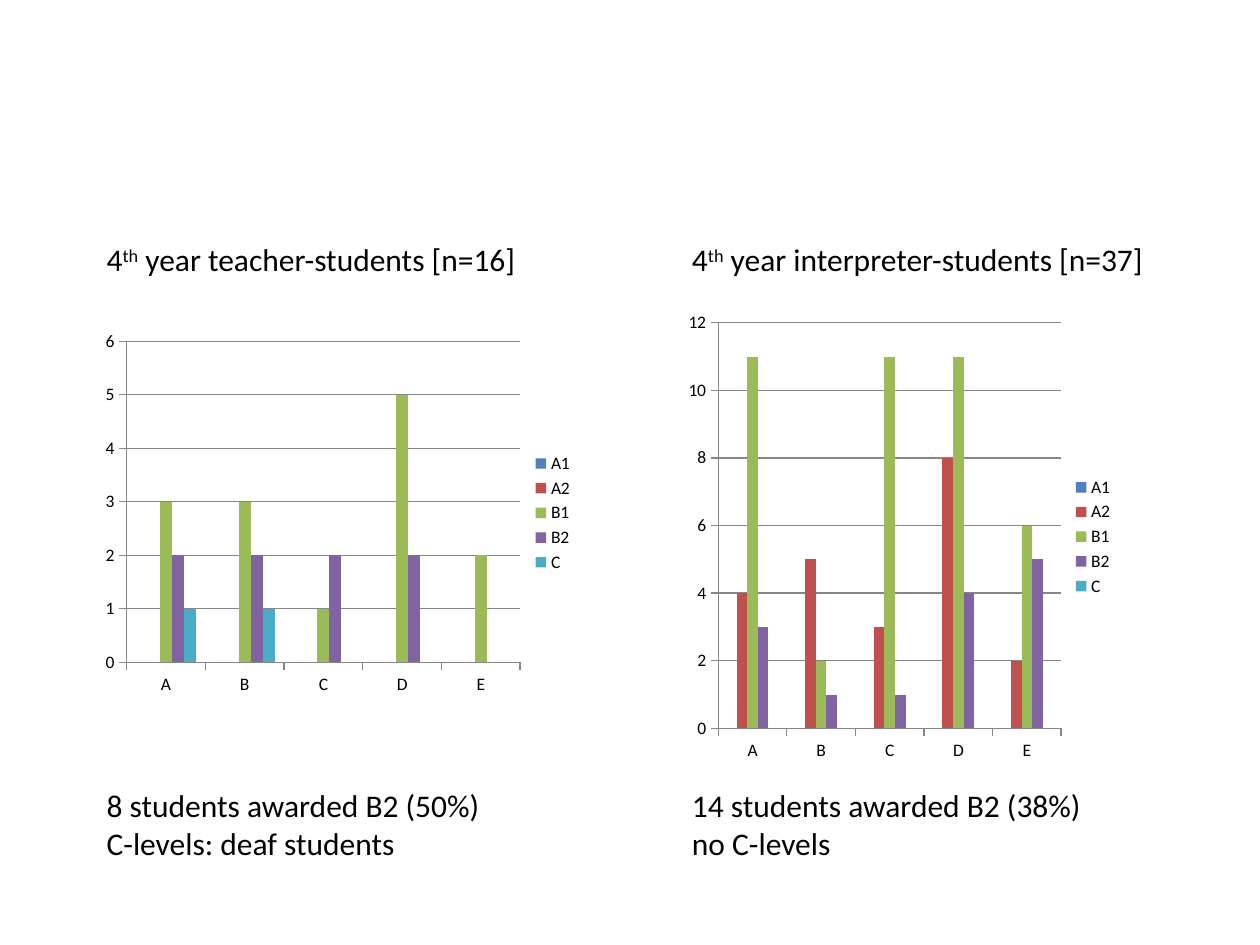
from lxml import etree
from pptx import Presentation
from pptx.chart.data import CategoryChartData
from pptx.dml.color import RGBColor
from pptx.enum import chart as ch, text
from pptx.oxml.ns import qn
from pptx.util import Cm, Pt

FONT = "Calibri"
LEVELS = {"A1": "4F81BD", "A2": "C0504D", "B1": "9BBB59", "B2": "8064A2", "C": "4BACC6"}
CATEGORIES = ["A", "B", "C", "D", "E"]
NONE = [None] * 5

# Boxes are left, top, width, height in centimetres
GROUPS = [
    {"name": "teacher", "n": 16, "heading": (1.9, 4.72, 8.92, 1.03),
     "chart": (1.93, 6.53, 9.88, 7.62), "top": 6, "step": 1,
     "values": [NONE, NONE, [3, 3, 1, 5, 2], [2, 2, 2, 2, None], [1, 1, None, None, None]],
     "findings": ["8 students awarded B2 (50%)", "C-levels: deaf students"]},
    {"name": "interpreter", "n": 37, "heading": (13.7, 4.72, 9.78, 1.03),
     "chart": (13.7, 6.12, 9, 9.4), "top": 12, "step": 2,
     "values": [NONE, [4, 5, 3, 8, 2], [11, 2, 11, 11, 6], [3, 1, 1, 4, 5], NONE],
     "findings": ["14 students awarded B2 (38%)", "no C-levels"]},
]
FINDINGS_BOX = (1.9, 15.72, 22.05, 1.8)


def rgb(value):
    return RGBColor.from_string(value)


def style(font, size):
    for key, value in {"name": FONT, "size": Pt(size)}.items():
        setattr(font, key, value)
    font.color.rgb = rgb("000000")


def add_text(s, box, wrap):
    tf = s.shapes.add_textbox(*map(Cm, box)).text_frame
    tf.word_wrap = wrap
    tf.auto_size = text.MSO_AUTO_SIZE.SHAPE_TO_FIT_TEXT
    return tf


def add_run(p, words):
    r = p.add_run()
    r.text = words
    style(r.font, 18)
    return r


def add_heading(s, group):
    p = add_text(s, group["heading"], False).paragraphs[0]
    add_run(p, "4")
    add_run(p, "th").font._element.set("baseline", "30000")
    add_run(p, f" year {group['name']}-students [n={group['n']}]")


def add_level_chart(s, group):
    data = CategoryChartData()
    data.categories = CATEGORIES
    for level, values in zip(LEVELS, group["values"]):
        data.add_series(level, values)
    chart = s.shapes.add_chart(ch.XL_CHART_TYPE.COLUMN_CLUSTERED,
                               *map(Cm, group["chart"]), data).chart
    style(chart.font, 10)
    chart.has_title = False
    chart.has_legend = True
    chart.legend.position = ch.XL_LEGEND_POSITION.RIGHT
    chart.legend.include_in_layout = False

    plot = chart.plots[0]
    plot.gap_width = 150
    plot.vary_by_categories = False
    for series, color in zip(plot.series, LEVELS.values()):
        series.format.fill.solid()
        series.format.fill.fore_color.rgb = rgb(color)

    axis = chart.value_axis
    for key, value in {"minimum_scale": 0, "maximum_scale": group["top"],
                       "major_unit": group["step"], "has_major_gridlines": True}.items():
        setattr(axis, key, value)
    for part in (axis, chart.category_axis, axis.major_gridlines):
        part.format.line.color.rgb = rgb("868686")
        part.format.line.width = Pt(0.75)
    for part in (axis, chart.category_axis):
        part.major_tick_mark = ch.XL_TICK_MARK.OUTSIDE


def add_findings(s):
    """Write both groups' findings in one box, the second column at a tab stop."""
    tf = add_text(s, FINDINGS_BOX, True)
    tab = Cm(GROUPS[1]["heading"][0] - FINDINGS_BOX[0])
    for i, row in enumerate(zip(*(g["findings"] for g in GROUPS))):
        p = tf.add_paragraph() if i else tf.paragraphs[0]
        tabs = etree.SubElement(p._p.get_or_add_pPr(), qn("a:tabLst"))
        etree.SubElement(tabs, qn("a:tab"), pos=str(tab), algn="l")
        add_run(p, "\t".join(row))


def main():
    prs = Presentation()
    prs.slide_width, prs.slide_height = Cm(25.4), Cm(19.05)
    s = prs.slides.add_slide(prs.slide_layouts[6])
    for group in GROUPS:
        add_heading(s, group)
        add_level_chart(s, group)
    add_findings(s)
    prs.save("out.pptx")


if __name__ == "__main__":
    main()
